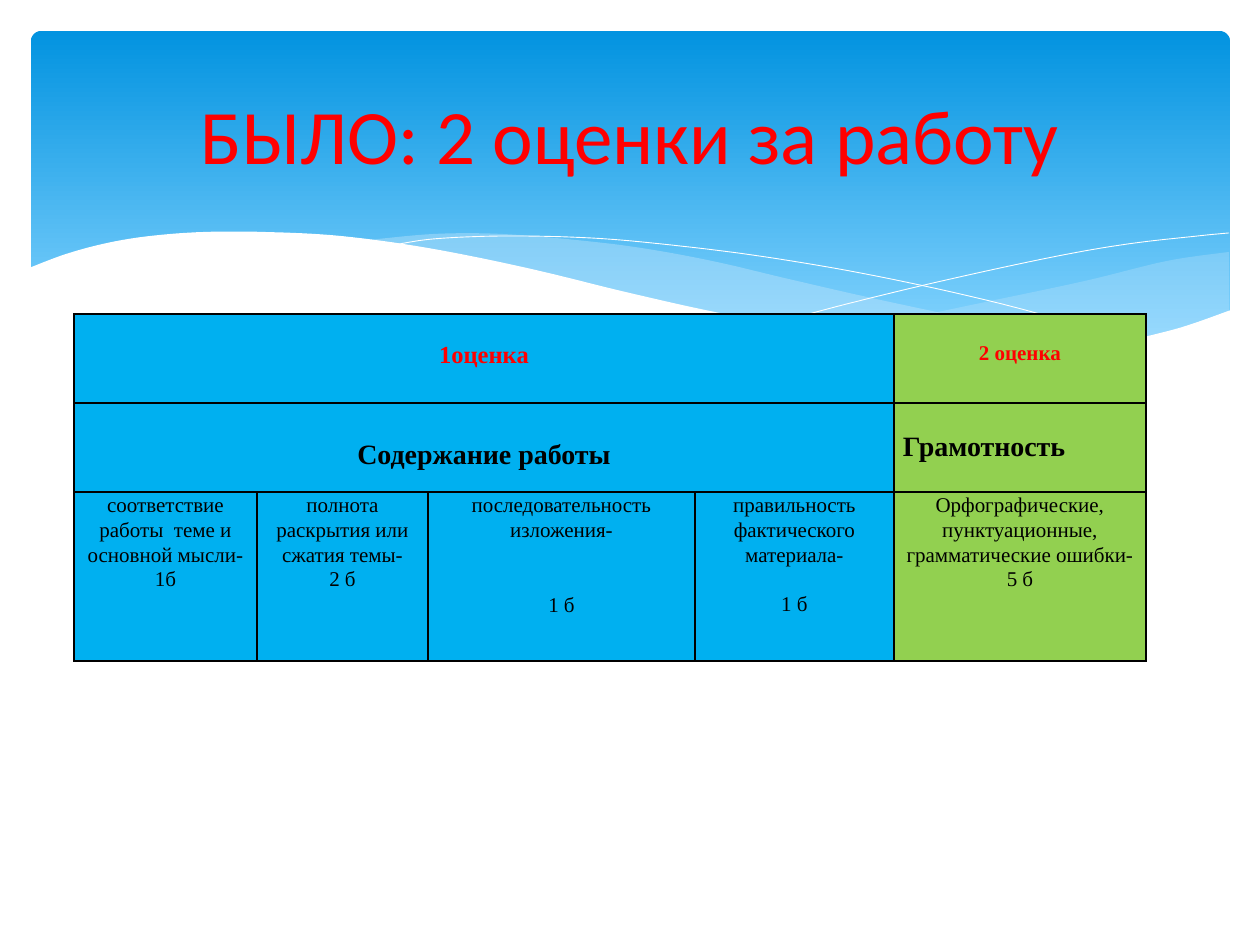
from dataclasses import dataclass
from lxml.etree import SubElement as Sub
from pptx import Presentation
from pptx.dml.color import RGBColor as RGB
from pptx.enum.shapes import MSO_SHAPE as SHAPE
from pptx.enum.text import MSO_ANCHOR as ANCHOR, PP_ALIGN as ALIGN
from pptx.oxml.ns import qn
from pptx.util import Emu, Pt

PX = 914400 / 126


@dataclass(frozen=True)
class Theme:
    white: RGB = RGB(255, 255, 255)
    black: RGB = RGB(0, 0, 0)
    red: RGB = RGB(255, 0, 0)
    sky_top: RGB = RGB(0x02, 0x93, 0xE0)
    sky_bottom: RGB = RGB(0x83, 0xD3, 0xFE)
    mist: RGB = RGB(0xC6, 0xE7, 0xFC)
    blue: RGB = RGB(0x00, 0xB0, 0xF0)
    green: RGB = RGB(0x92, 0xD0, 0x50)
    title_font: str = "Calibri"
    table_font: str = "Times New Roman"
    title_size: int = 44
    heading_size: int = 16
    grade_size: int = 14
    text_size: int = 12


theme = Theme()


def emu(px):
    return Emu(round(px * PX))


def draw_wave(page, curves, closed):
    points = []
    for curve in curves:
        padded = [curve[0], *curve, curve[-1]]
        for a, b, c, d in zip(padded, padded[1:], padded[2:], padded[3:]):
            for step in range(8):
                t = step / 8
                points.append([
                    emu(b[i] + t * (c[i] - a[i]) / 2
                        + t ** 2 * (2 * a[i] - 5 * b[i] + 4 * c[i] - d[i]) / 2
                        + t ** 3 * (3 * b[i] - a[i] - 3 * c[i] + d[i]) / 2)
                    for i in (0, 1)])
        points.append([emu(value) for value in curve[-1]])
    builder = page.shapes.build_freeform(*points[0], scale=1.0)
    builder.add_line_segments(points[1:], close=closed)
    wave = builder.convert_to_shape()
    wave.shadow.inherit = False
    return wave


deck = Presentation()
deck.slide_width, deck.slide_height = emu(1260), emu(945)
page = deck.slides.add_slide(deck.slide_layouts[5])

sky = page.shapes.add_shape(SHAPE.ROUNDED_RECTANGLE, emu(31), emu(31), emu(1199), emu(340))
sky.adjustments[0] = 0.03
sky.shadow.inherit = False
sky.line.fill.background()
sky.fill.gradient()
sky.fill.gradient_angle = 270
for stop, color, position in zip(sky.fill.gradient_stops, (theme.sky_top, theme.sky_bottom), (0, 0.9)):
    stop.color.rgb = color
    stop.position = position

right_wave = [
    [(1229, 252), (1167, 261), (1085, 281), (981, 303), (833, 334)],
    [(833, 334), (905, 343), (1000, 349), (1064, 349), (1120, 345), (1170, 335), (1229, 311)],
]
middle_wave = [
    [(1125, 344), (1017, 328), (890, 302), (793, 280), (717, 262), (648, 249),
     (586, 241), (503, 234), (433, 234), (360, 241)],
    [(360, 241), (431, 251), (510, 266), (618, 292), (713, 312), (799, 329),
     (876, 341), (959, 349), (1044, 350), (1125, 344)],
]
falling_line = [[(389, 246), (433, 239), (505, 236), (591, 238), (671, 245),
                 (766, 257), (876, 276), (1002, 304), (1143, 343)]]
rising_line = [[(772, 324), (847, 304), (942, 281), (1053, 257), (1128, 244), (1198, 236), (1229, 233)]]
front_wave = [
    [(1231, 310), (1172, 330), (1103, 344), (1019, 349), (938, 346), (842, 334),
     (730, 315), (634, 294), (527, 268), (428, 248), (341, 236), (266, 232),
     (203, 232), (150, 236), (107, 243), (66, 254), (29, 268)],
    [(29, 415), (1231, 415)],
]

for curves, color, opacity in ((right_wave, theme.mist, 29), (middle_wave, theme.mist, 40),
                               (falling_line, None, 100), (rising_line, None, 100),
                               (front_wave, theme.white, 100)):
    wave = draw_wave(page, curves, closed=color is not None)
    if color is None:
        wave.fill.background()
        wave.line.color.rgb = theme.white
        wave.line.width = Pt(0.5)
        continue
    wave.line.fill.background()
    wave.fill.solid()
    wave.fill.fore_color.rgb = color
    if opacity < 100:
        tint = wave.element.spPr.find(qn("a:solidFill"))[0]
        Sub(tint, qn("a:alpha"), val=str(opacity * 1000))

columns = [183, 171, 267, 199, 252]
rows = [89, 89, 169]
frame = page.shapes.add_table(len(rows), len(columns), emu(74), emu(314), emu(sum(columns)), emu(sum(rows)))
table = frame.table
table.first_row = table.horz_banding = False
for column, width in zip(table.columns, columns):
    column.width = emu(width)
for row, height in zip(table.rows, rows):
    row.height = emu(height)
for row in (0, 1):
    table.cell(row, 0).merge(table.cell(row, 3))

for row in range(len(rows)):
    for column in range(len(columns)):
        cell = table.cell(row, column)
        cell.margin_left = cell.margin_right = emu(9)
        cell.margin_top = cell.margin_bottom = 0
        props = cell._tc.get_or_add_tcPr()
        for side in ("a:lnL", "a:lnR", "a:lnT", "a:lnB"):
            border = Sub(props, qn(side), w=str(Pt(1)))
            Sub(Sub(border, qn("a:solidFill")), qn("a:srgbClr"), val=str(theme.black))
        cell.fill.solid()
        cell.fill.fore_color.rgb = theme.green if column == 4 else theme.blue

headings = [
    (0, 0, "1оценка", theme.grade_size, theme.red, ALIGN.CENTER, 26),
    (0, 4, "2 оценка", theme.text_size, theme.red, ALIGN.CENTER, 26),
    (1, 0, "Содержание работы", theme.heading_size, theme.black, ALIGN.CENTER, 34),
    (1, 4, "Грамотность", theme.heading_size, theme.black, ALIGN.LEFT, 26),
]
for row, column, text, size, color, align, top in headings:
    cell = table.cell(row, column)
    cell.margin_top = emu(top)
    para = cell.text_frame.paragraphs[0]
    para.alignment = align
    para.line_spacing = 1.07
    span = para.add_run()
    span.text = text
    span.font.name, span.font.size, span.font.bold = theme.table_font, Pt(size), True
    span.font.color.rgb = color

criteria = [
    ("соответствие работы  теме и основной мысли-", "1б", 0),
    ("полнота раскрытия или сжатия темы-", "2 б", 0),
    ("последовательность изложения-", "1 б", 50),
    ("правильность фактического материала-", "1 б", 25),
    ("Орфографические, пунктуационные, грамматические ошибки-", "5 б", 0),
]
for column, (criterion, points, gap) in enumerate(criteria):
    box = table.cell(2, column).text_frame
    for para, text, before in ((box.paragraphs[0], criterion, 0), (box.add_paragraph(), points, gap)):
        para.alignment = ALIGN.CENTER
        para.line_spacing = 1.07
        para.space_before = emu(before)
        span = para.add_run()
        span.text = text
        span.font.name, span.font.size = theme.table_font, Pt(theme.text_size)
        span.font.color.rgb = theme.black

title = page.shapes.title
title.left, title.top, title.width, title.height = emu(63), emu(47), emu(1134), emu(173)
title.text_frame.vertical_anchor = ANCHOR.MIDDLE
para = title.text_frame.paragraphs[0]
para.alignment = ALIGN.CENTER
span = para.add_run()
span.text = "БЫЛО: 2 оценки за работу"
span.font.name, span.font.size = theme.title_font, Pt(theme.title_size)
span.font.color.rgb = theme.red
page.shapes.element.append(title.element)

deck.save("out.pptx")
